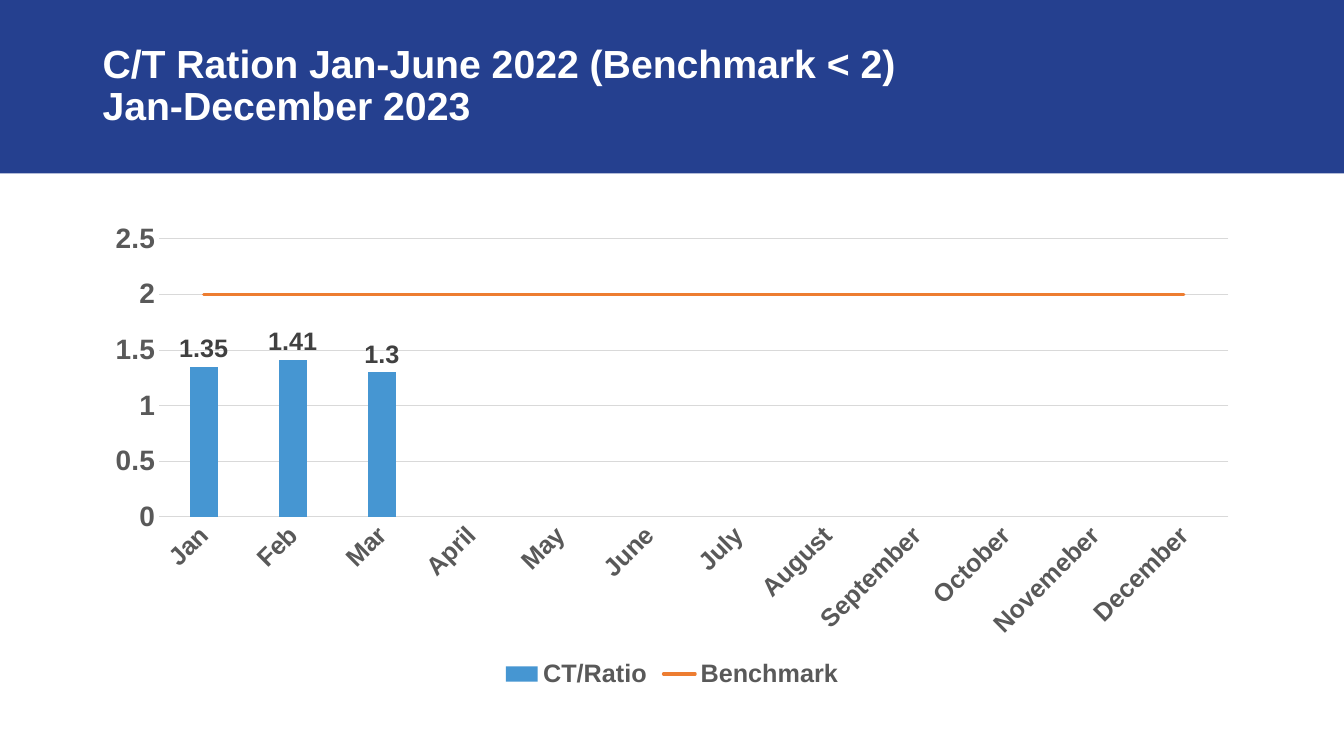
"""Build a slide with a monthly ratio column chart against a benchmark line."""
from dataclasses import dataclass

from lxml import etree
from pptx import Presentation
from pptx.chart.data import CategoryChartData
from pptx.dml.color import RGBColor
from pptx.enum.chart import (XL_CHART_TYPE, XL_LABEL_POSITION, XL_LEGEND_POSITION,
                             XL_MARKER_STYLE, XL_TICK_MARK)
from pptx.enum.shapes import MSO_SHAPE
from pptx.enum.text import MSO_ANCHOR, PP_ALIGN
from pptx.oxml import parse_xml
from pptx.oxml.ns import nsdecls, qn
from pptx.util import Cm, Pt

COLUMN = XL_CHART_TYPE.COLUMN_CLUSTERED
OUTSIDE_END = XL_LABEL_POSITION.OUTSIDE_END
BOTTOM = XL_LEGEND_POSITION.BOTTOM
NO_MARKER = XL_MARKER_STYLE.NONE
NO_TICK = XL_TICK_MARK.NONE
RECTANGLE = MSO_SHAPE.RECTANGLE
MIDDLE = MSO_ANCHOR.MIDDLE
LEFT = PP_ALIGN.LEFT

TITLE = "C/T Ration Jan-June 2022 (Benchmark < 2)\vJan-December 2023"
MONTHS = ["Jan", "Feb", "Mar", "April", "May", "June", "July", "August",
          "September", "October", "Novemeber", "December"]
RATIOS = [1.35, 1.41, 1.3]
BENCHMARK = 2

SLIDE_SIZE = Cm(33.87), Cm(19.05)
BAND_HEIGHT = Cm(4.37)
TITLE_BOX = Cm(2.33), Cm(0.56), Cm(28.73), Cm(3.25)
CHART_BOX = Cm(2.33), Cm(5.38), Cm(29.21), Cm(12.09)


@dataclass(frozen=True)
class Theme:
    font: str = "Arial"
    band: str = "25408F"
    title: str = "FFFFFF"
    text: str = "595959"
    label: str = "404040"
    grid: str = "D9D9D9"
    column: str = "4696D2"
    line: str = "ED7D31"
    title_size: int = 28
    value_size: int = 20
    text_size: int = 18


THEME = Theme()


def rgb(value):
    return RGBColor.from_string(value)


def style_font(font, size, color):
    font.name, font.size, font.bold = THEME.font, Pt(size), True
    font.color.rgb = rgb(color)


def style_line(line, color, width):
    line.color.rgb = rgb(color)
    line.width = Pt(width)


def add_header(slide):
    band = slide.shapes.add_shape(RECTANGLE, 0, 0, SLIDE_SIZE[0], BAND_HEIGHT)
    band.shadow.inherit = False
    band.fill.solid()
    band.fill.fore_color.rgb = rgb(THEME.band)
    band.line.fill.background()
    title = slide.shapes.title
    title._element.addprevious(band._element)
    title.left, title.top, title.width, title.height = TITLE_BOX
    tf = title.text_frame
    tf.text = TITLE
    tf.vertical_anchor = MIDDLE
    p = tf.paragraphs[0]
    p.alignment, p.line_spacing = LEFT, 0.9
    style_font(p.font, THEME.title_size, THEME.title)


def move_last_series_to_line(chart):
    bar = chart.plots[0]._element
    ser = bar.findall(qn("c:ser"))[-1]
    for flag in ser.findall(qn("c:invertIfNegative")):
        ser.remove(flag)
    line = parse_xml(f'<c:lineChart {nsdecls("c")}><c:grouping val="standard"/>'
                     '<c:varyColors val="0"/></c:lineChart>')
    line.append(ser)
    etree.SubElement(line, qn("c:marker"), val="1")
    for axis in bar.findall(qn("c:axId")):
        etree.SubElement(line, qn("c:axId"), val=axis.get("val"))
    bar.addnext(line)


def add_ratio_chart(slide):
    data = CategoryChartData()
    data.categories = MONTHS
    data.add_series("CT/Ratio", RATIOS + [None] * (len(MONTHS) - len(RATIOS)))
    data.add_series("Benchmark", [BENCHMARK] * len(MONTHS))
    chart = slide.shapes.add_chart(COLUMN, *CHART_BOX, data).chart
    style_font(chart.font, THEME.text_size, THEME.text)
    chart.has_title = False
    chart.has_legend = True
    chart.legend.position = BOTTOM
    chart.legend.include_in_layout = False
    style_font(chart.legend.font, THEME.text_size, THEME.text)

    months, values = chart.category_axis, chart.value_axis
    for axis, size in ((months, THEME.text_size), (values, THEME.value_size)):
        axis.major_tick_mark = axis.minor_tick_mark = NO_TICK
        style_font(axis.tick_labels.font, size, THEME.text)
    style_line(months.format.line, THEME.grid, 0.75)
    values.format.line.fill.background()
    style_line(values.major_gridlines.format.line, THEME.grid, 0.75)

    move_last_series_to_line(chart)
    columns, lines = chart.plots
    columns.gap_width = 219
    columns.vary_by_categories = False
    ratio, benchmark = columns.series[0], lines.series[0]
    ratio.format.fill.solid()
    ratio.format.fill.fore_color.rgb = rgb(THEME.column)
    labels = ratio.data_labels
    labels.show_value = True
    labels.position = OUTSIDE_END
    style_font(labels.font, THEME.text_size, THEME.label)
    style_line(benchmark.format.line, THEME.line, 2.25)
    benchmark_ln = benchmark._element.find(".//" + qn("a:ln"))
    benchmark_ln.set("cap", "rnd")
    benchmark.marker.style = NO_MARKER
    benchmark.smooth = False


def main():
    prs = Presentation()
    prs.slide_width, prs.slide_height = SLIDE_SIZE
    slide = prs.slides.add_slide(prs.slide_layouts[5])
    add_header(slide)
    add_ratio_chart(slide)
    prs.save("out.pptx")


if __name__ == "__main__":
    main()
